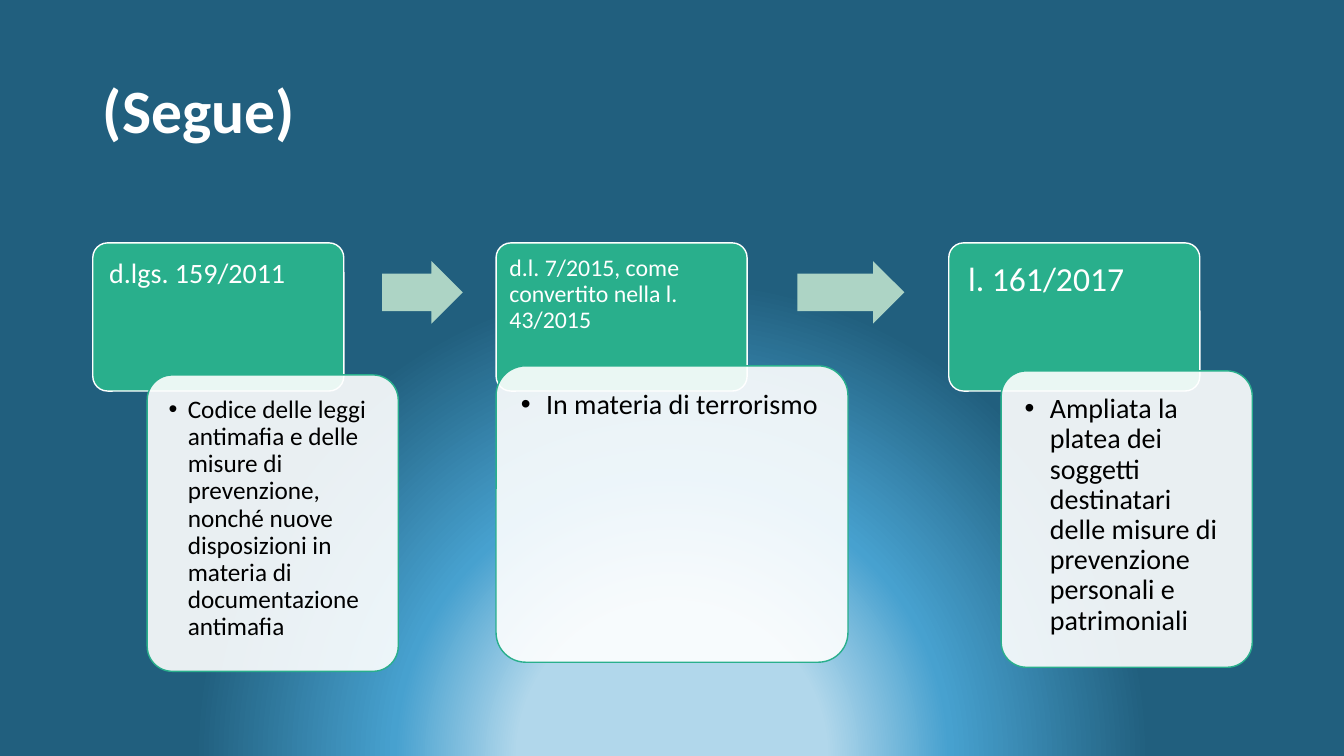
from lxml import etree
from pptx import Presentation
from pptx.dml.color import RGBColor
from pptx.enum.shapes import MSO_SHAPE as Kind
from pptx.enum.text import MSO_ANCHOR as Anchor, MSO_AUTO_SIZE as Fit, PP_ALIGN as Align
from pptx.oxml import parse_xml
from pptx.oxml.ns import nsdecls, qn
from pptx.util import Inches, Pt


def write(shape, text, size, color="FFFFFF", bold=False, inset=(0.1, 0.05, 0.1, 0.05), anchor=Anchor.TOP, indent=0):
    frame = shape.text_frame
    frame.word_wrap = True
    frame.auto_size = Fit.NONE
    frame.vertical_anchor = anchor
    frame.margin_left, frame.margin_top, frame.margin_right, frame.margin_bottom = map(Inches, inset)
    para = frame.paragraphs[0]
    para.alignment = Align.LEFT
    para.line_spacing = 0.9
    run = para.add_run()
    run.text = text
    run.font.name = "Calibri"
    run.font.size = Pt(size)
    run.font.bold = bold
    run.font.color.rgb = RGBColor.from_string(color)
    if indent:
        para.level = 1
        props = para._p.get_or_add_pPr()
        props.set("marL", str(Inches(indent)))
        props.set("indent", str(-Inches(indent)))
        etree.SubElement(props, qn("a:buFont"), typeface="Arial")
        etree.SubElement(props, qn("a:buChar"), char="•")


def draw(kind, left, top, width, height, fill, line=None, alpha=None):
    shape = slide.shapes.add_shape(kind, Inches(left), Inches(top), Inches(width), Inches(height))
    shape.shadow.inherit = False
    shape.fill.solid()
    shape.fill.fore_color.rgb = RGBColor.from_string(fill)
    if line:
        shape.line.color.rgb = RGBColor.from_string(line)
        shape.line.width = Pt(1)
    else:
        shape.line.fill.background()
    if alpha:
        tint = shape._element.spPr.find(qn("a:solidFill"))[0]
        etree.SubElement(tint, qn("a:alpha"), val=str(alpha * 1000))
    return shape


deck = Presentation()
deck.slide_width, deck.slide_height = Inches(13.33), Inches(7.5)
slide = deck.slides.add_slide(deck.slide_layouts[5])

slide.background.fill.solid()
back = slide.element.xpath(".//p:bgPr")[0]
stops = "".join(
    f'<a:gs pos="{pos * 1000}"><a:srgbClr val="{color}"/></a:gs>'
    for pos, color in [(20, "B1D7EB"), (36, "47A1CF"), (62, "215F7E")]
)
glow = parse_xml(
    f'<a:gradFill {nsdecls("a")} rotWithShape="1"><a:gsLst>{stops}</a:gsLst><a:path path="circle">'
    '<a:fillToRect l="50000" t="130000" r="50000" b="-30000"/></a:path></a:gradFill>'
)
back.replace(back[0], glow)

title = slide.shapes.title
title.left, title.top, title.width, title.height = map(Inches, (0.92, 0.4, 11.5, 1.45))
write(title, "(Segue)", 44, bold=True, anchor=Anchor.MIDDLE)

GREEN, WHITE = "29AF8C", "FFFFFF"
steps = [
    (0.92, "d.lgs. 159/2011", 20, 0.12, (1.46, 3.72, 2.49), 18, 0.14, 0.19,
     "Codice delle leggi antimafia e delle misure di prevenzione, "
     "nonché nuove disposizioni in materia di documentazione antimafia"),
    (4.92, "d.l. 7/2015, come convertito nella l. 43/2015", 17, 0.09, (4.92, 3.63, 3.49), 20, 0.16, 0.25,
     "In materia di terrorismo"),
    (9.41, "l. 161/2017", 24, 0.15, (9.93, 3.68, 2.49), 20, 0.16, 0.25,
     "Ampliata la platea dei soggetti destinatari delle misure di prevenzione personali e patrimoniali"),
]
for left, law, size, pad, place, small, gap, indent, note in steps:
    head = draw(Kind.ROUNDED_RECTANGLE, left, 2.41, 2.49, 1.47, GREEN, WHITE)
    body = draw(Kind.ROUNDED_RECTANGLE, *place, 2.94, WHITE, GREEN, 90)
    for box in (head, body):
        box.adjustments[0] = 0.1
    write(head, law, size, inset=(pad,) * 4)
    write(body, note, small, "000000", inset=(gap,) * 4, indent=indent)

for left, width in [(3.79, 0.8), (7.91, 1.06)]:
    arrow = draw(Kind.RIGHT_ARROW, left, 2.59, width, 0.62, "ADD4C5")
    arrow.adjustments[0], arrow.adjustments[1] = 0.6, 0.5

deck.save("out.pptx")
